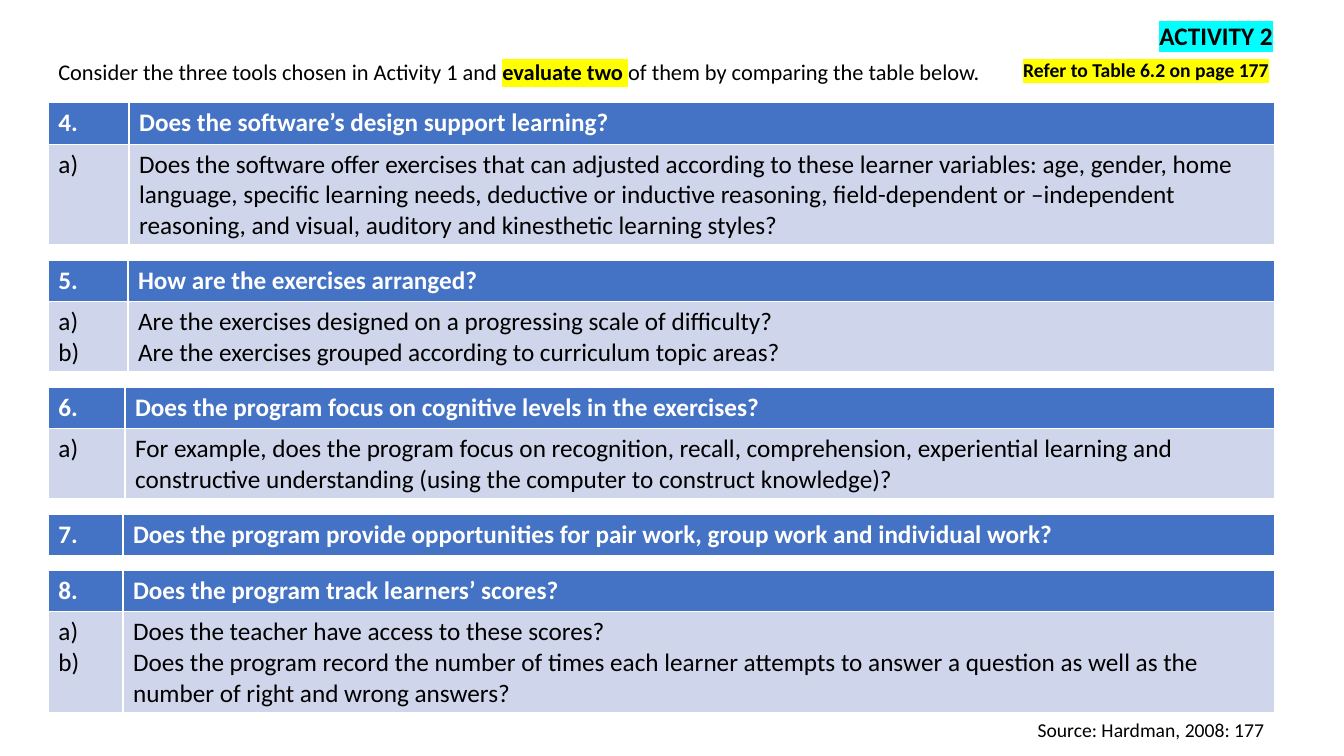
from lxml.etree import SubElement
from pptx import Presentation
from pptx.dml.color import RGBColor
from pptx.enum.text import MSO_ANCHOR, MSO_AUTO_SIZE, PP_ALIGN
from pptx.oxml.ns import qn
from pptx.util import Inches, Pt

BLACK = RGBColor(0x00, 0x00, 0x00)
WHITE = RGBColor(0xFF, 0xFF, 0xFF)
HEADER_BLUE = RGBColor(0x44, 0x72, 0xC4)
BODY_BLUE = RGBColor(0xCF, 0xD5, 0xEA)
YELLOW = RGBColor(0xFF, 0xFF, 0x00)
CYAN = RGBColor(0x00, 0xFF, 0xFF)

TABLE_LEFT, TABLE_TOP, TABLE_WIDTH = 0.48, 1.02, 12.16
HEADER_HEIGHT, LINE_HEIGHT, CELL_PADDING, TABLE_GAP = 0.41, 0.3, 0.1, 0.15


def add_run(paragraph, text, size=18, color=BLACK, bold=False, highlight=None):
    run = paragraph.add_run()
    run.text = text
    run.font.size = Pt(size)
    run.font.bold = bold
    run.font.color.rgb = color
    if highlight is not None:
        mark = SubElement(run.font._element, qn("a:highlight"))
        SubElement(mark, qn("a:srgbClr")).set("val", str(highlight))
    run.font.name = "Calibri"


presentation = Presentation()
presentation.slide_width = Inches(13.33)
presentation.slide_height = Inches(7.5)
slide = presentation.slides.add_slide(presentation.slide_layouts[5])

title = slide.shapes.title
title.left, title.top = Inches(11.4), Inches(0.15)
title.width, title.height = Inches(1.45), Inches(0.4)
title.text_frame.auto_size = MSO_AUTO_SIZE.NONE
title.text_frame.vertical_anchor = MSO_ANCHOR.TOP
title_paragraph = title.text_frame.paragraphs[0]
title_paragraph.alignment = PP_ALIGN.LEFT
add_run(title_paragraph, "ACTIVITY 2", bold=True, highlight=CYAN)

# Each text box: left, top, width, height, alignment, runs with their format
text_boxes = [
    (0.48, 0.53, 9.43, 0.37, PP_ALIGN.LEFT, [
        ("Consider the three tools chosen in Activity 1 and ", {"size": 16}),
        ("evaluate two ", {"size": 16, "bold": True, "highlight": YELLOW}),
        ("of them by comparing the table below.", {"size": 16}),
    ]),
    (10.05, 0.53, 3.06, 0.34, PP_ALIGN.LEFT, [
        ("Refer to Table 6.2 on page 177", {"size": 14, "bold": True, "highlight": YELLOW}),
    ]),
    (9.58, 7.07, 3.06, 0.34, PP_ALIGN.RIGHT, [
        ("Source: Hardman, 2008: 177", {"size": 14}),
    ]),
]
for left, top, width, height, alignment, runs in text_boxes:
    box = slide.shapes.add_textbox(Inches(left), Inches(top), Inches(width), Inches(height))
    box.text_frame.word_wrap = True
    paragraph = box.text_frame.paragraphs[0]
    paragraph.alignment = alignment
    for text, text_format in runs:
        add_run(paragraph, text, **text_format)

# Each table: number, heading, number column width, text lines in the body, questions
question_tables = [
    ("4.", "Does the software’s design support learning?", 0.8, 3, [
        "Does the software offer exercises that can adjusted according to these learner "
        "variables: age, gender, home language, specific learning needs, deductive or "
        "inductive reasoning, field-dependent or –independent reasoning, and visual, "
        "auditory and kinesthetic learning styles?",
    ]),
    ("5.", "How are the exercises arranged?", 0.79, 2, [
        "Are the exercises designed on a progressing scale of difficulty?",
        "Are the exercises grouped according to curriculum topic areas?",
    ]),
    ("6.", "Does the program focus on cognitive levels in the exercises?", 0.76, 2, [
        "For example, does the program focus on recognition, recall, comprehension, "
        "experiential learning and constructive understanding (using the computer to "
        "construct knowledge)?",
    ]),
    ("7.", "Does the program provide opportunities for pair work, group work and "
           "individual work?", 0.74, 0, []),
    ("8.", "Does the program track learners’ scores?", 0.74, 3, [
        "Does the teacher have access to these scores?",
        "Does the program record the number of times each learner attempts to answer a "
        "question as well as the number of right and wrong answers?",
    ]),
]
top = TABLE_TOP
for number, heading, number_width, line_count, questions in question_tables:
    rows = [([number], [heading])]
    heights = [HEADER_HEIGHT]
    if questions:
        letters = [f"{letter})" for letter in "ab"[:len(questions)]]
        rows.append((letters, questions))
        heights.append(CELL_PADDING + LINE_HEIGHT * line_count)

    table = slide.shapes.add_table(
        len(rows), 2, Inches(TABLE_LEFT), Inches(top),
        Inches(TABLE_WIDTH), Inches(sum(heights))).table
    table.columns[0].width = Inches(number_width)
    table.columns[1].width = Inches(TABLE_WIDTH - number_width)
    for row_index, row in enumerate(rows):
        is_header = row_index == 0
        table.rows[row_index].height = Inches(heights[row_index])
        for column_index, lines in enumerate(row):
            cell = table.cell(row_index, column_index)
            cell.fill.solid()
            cell.fill.fore_color.rgb = HEADER_BLUE if is_header else BODY_BLUE
            for line_index, line in enumerate(lines):
                frame = cell.text_frame
                paragraph = frame.add_paragraph() if line_index else frame.paragraphs[0]
                add_run(paragraph, line, color=WHITE if is_header else BLACK, bold=is_header)
    top += sum(heights) + TABLE_GAP

presentation.save("out.pptx")
